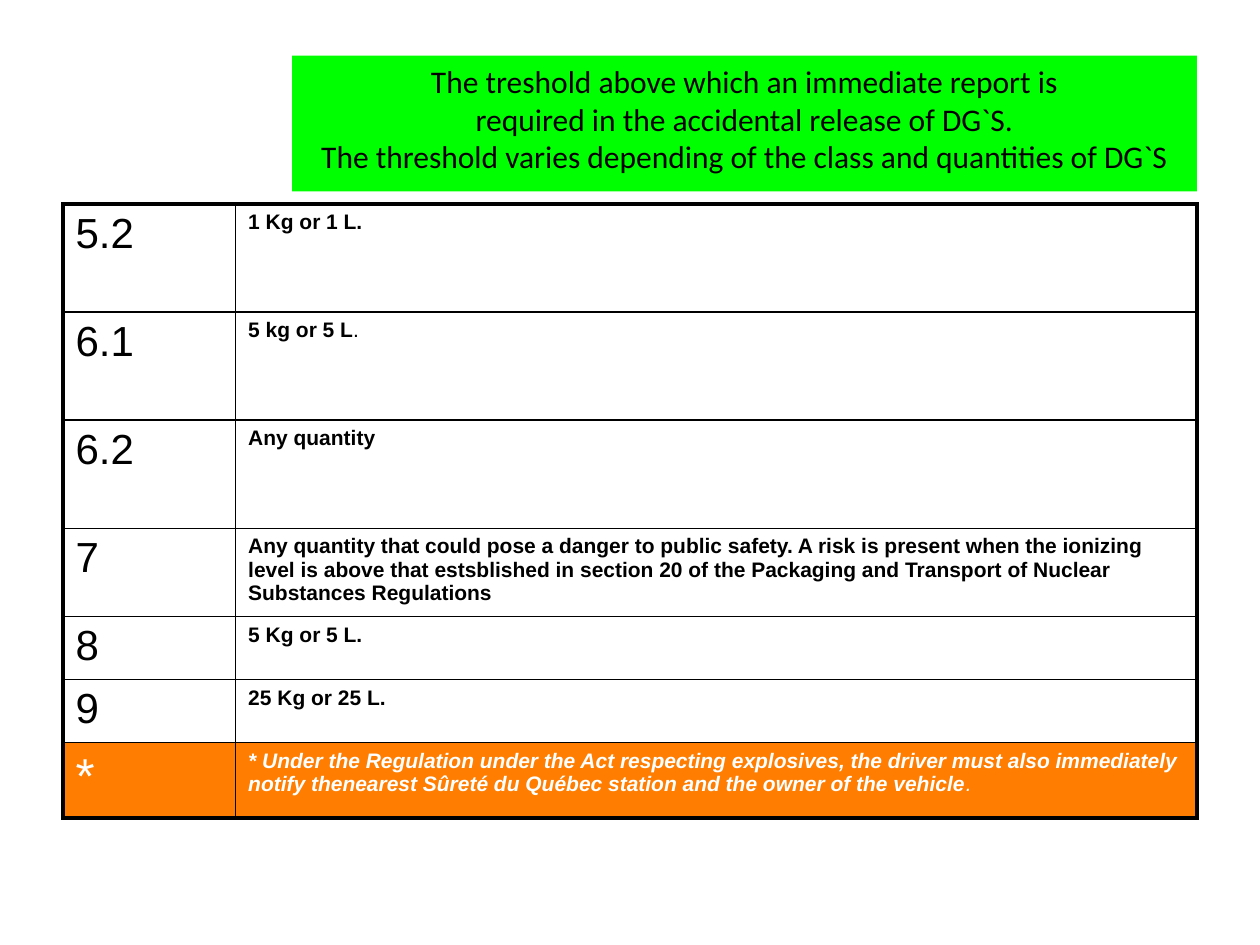
import dataclasses

import lxml.etree
import pptx
import pptx.dml.color
import pptx.enum.text
import pptx.oxml.ns
import pptx.util

Cm = pptx.util.Cm
Pt = pptx.util.Pt


@dataclasses.dataclass(frozen=True)
class Theme:
    ink: str = "000000"
    paper: str = "FFFFFF"
    banner: str = "00FF00"
    warning: str = "FF7D00"
    title_font: str = "Calibri"
    table_font: str = "Arial"
    title_size: int = 18
    class_size: int = 24
    star_size: int = 28
    limit_size: int = 12
    outer_line: float = 2.25
    inner_line: float = 1


def rgb(code):
    return pptx.dml.color.RGBColor.from_string(code)


def add_text(paragraph, text, *, font, size, color, bold=False, italic=False):
    """Add one formatted run to a paragraph."""
    run = paragraph.add_run()
    run.text = text
    run.font.name = font
    run.font.size = Pt(size)
    run.font.color.rgb = rgb(color)
    run.font.bold = bold
    run.font.italic = italic


def set_border(cell, side, width, color):
    """Draw one side (L, R, T or B) of a table cell."""
    qn = pptx.oxml.ns.qn
    line = lxml.etree.SubElement(cell._tc.get_or_add_tcPr(), qn(f"a:ln{side}"), w=str(Pt(width)))
    fill = lxml.etree.SubElement(line, qn("a:solidFill"))
    lxml.etree.SubElement(fill, qn("a:srgbClr"), val=color)


class SlideBuilder:
    def __init__(self, slide, theme):
        self.slide = slide
        self.theme = theme

    def title(self, lines, left, top, width, height):
        theme = self.theme
        banner = self.slide.shapes.title
        banner.left, banner.top = Cm(left), Cm(top)
        banner.width, banner.height = Cm(width), Cm(height)
        banner.fill.solid()
        banner.fill.fore_color.rgb = rgb(theme.banner)
        frame = banner.text_frame
        frame.word_wrap = True
        frame.auto_size = pptx.enum.text.MSO_AUTO_SIZE.NONE
        frame.vertical_anchor = pptx.enum.text.MSO_ANCHOR.TOP
        paragraph = frame.paragraphs[0]
        paragraph.alignment = pptx.enum.text.PP_ALIGN.CENTER
        for index, line in enumerate(lines):
            if index:
                paragraph.add_line_break()
            add_text(paragraph, line, font=theme.title_font,
                     size=theme.title_size, color=theme.ink)

    def table(self, rows, left, top, widths, heights):
        grid = self.slide.shapes.add_table(
            len(rows), len(widths), Cm(left), Cm(top),
            Cm(sum(widths)), Cm(sum(heights))).table
        grid.first_row = grid.horz_banding = False
        for column, width in zip(grid.columns, widths):
            column.width = Cm(width)
        for row, height in zip(grid.rows, heights):
            row.height = Cm(height)
        for index, (hazard_class, limit, stop) in enumerate(rows):
            self.table_row(grid, index, hazard_class, limit, stop)

    def table_row(self, grid, index, hazard_class, limit, stop):
        theme = self.theme
        last = len(grid.rows) - 1
        is_note = hazard_class == "*"
        look = dict(font=theme.table_font, color=theme.paper if is_note else theme.ink)
        class_cell, limit_cell = grid.cell(index, 0), grid.cell(index, 1)

        # Heavy frame around the table, thin lines inside
        for cell, outer_side in ((class_cell, "L"), (limit_cell, "R")):
            outer = {outer_side}
            if index == 0:
                outer.add("T")
            if index == last:
                outer.add("B")
            for side in "LRTB":
                set_border(cell, side,
                           theme.outer_line if side in outer else theme.inner_line, theme.ink)
            if is_note:
                cell.fill.solid()
                cell.fill.fore_color.rgb = rgb(theme.warning)
            else:
                cell.fill.background()

        # Class number and reporting limit
        add_text(class_cell.text_frame.paragraphs[0], hazard_class,
                 size=theme.star_size if is_note else theme.class_size, **look)
        paragraph = limit_cell.text_frame.paragraphs[0]
        look.update(size=theme.limit_size, italic=is_note)
        add_text(paragraph, limit, bold=True, **look)
        if stop:
            add_text(paragraph, stop, **look)


# Class, limit, and a closing stop in regular weight
THRESHOLDS = [
    ("5.2", "1 Kg or 1 L.", ""),
    ("6.1", "5 kg or 5 L", "."),
    ("6.2", "Any quantity", ""),
    ("7", "Any quantity that could pose a danger to public safety. A risk is present "
          "when the ionizing level is above that estsblished in section 20 of the "
          "Packaging and Transport of Nuclear Substances Regulations", ""),
    ("8", "5 Kg or 5 L.", ""),
    ("9", "25 Kg or 25 L.", ""),
    ("*", "* Under the Regulation under the Act respecting explosives, the driver must "
          "also immediately notify thenearest Sûreté du Québec station and the owner "
          "of the vehicle", "."),
]


def main():
    deck = pptx.Presentation()
    deck.slide_width, deck.slide_height = Cm(25.4), Cm(19.05)
    title_only = deck.slide_layouts[5]
    builder = SlideBuilder(deck.slides.add_slide(title_only), Theme())

    # Green heading
    builder.title(
        ["The treshold above which an immediate report is",
         "required in the accidental release of DG`S.",
         "The threshold varies depending of the class and quantities of DG`S"],
        left=5.89, top=1.12, width=18.24, height=2.74)

    # Reporting thresholds by class
    builder.table(THRESHOLDS, left=1.27, top=4.11, widths=[3.48, 19.38],
                  heights=[2.18] * 3 + [1.78] + [1.27] * 2 + [1.52])

    deck.save("out.pptx")


if __name__ == "__main__":
    main()
